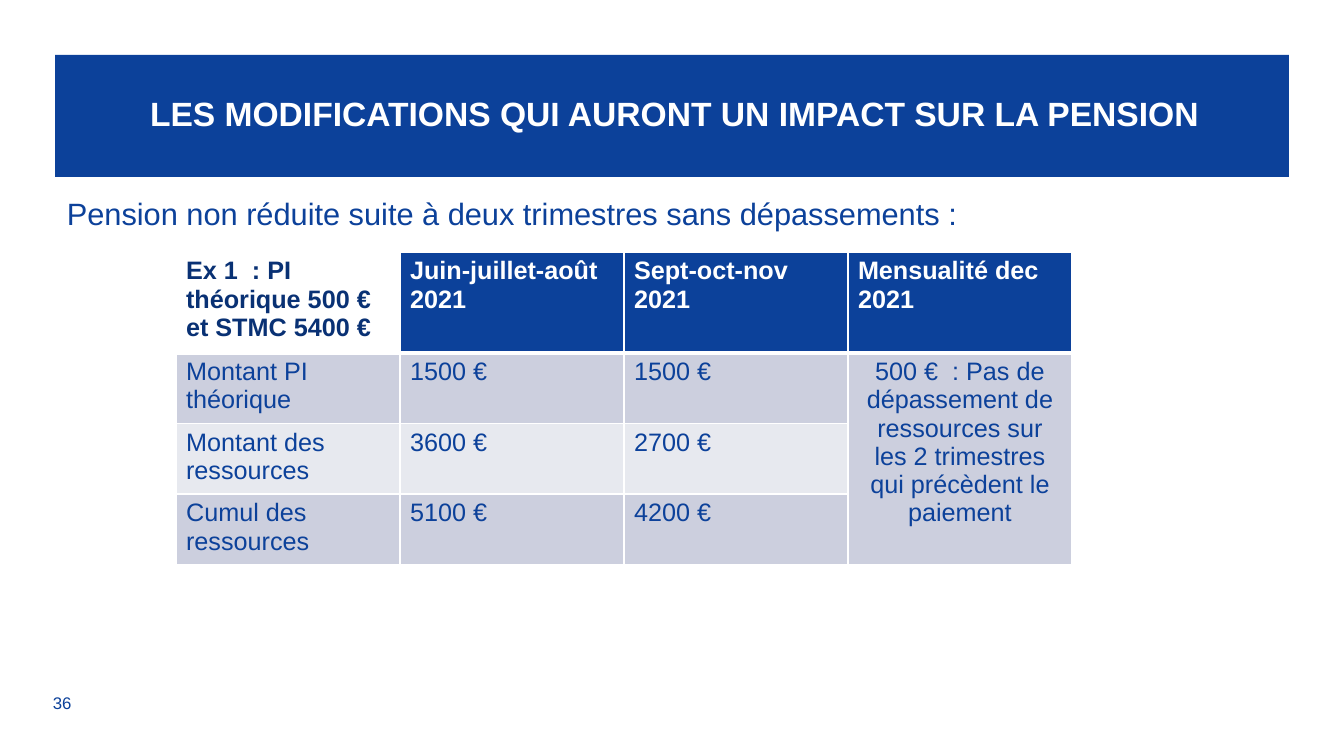
from lxml import etree
from pptx import Presentation
from pptx.dml.color import RGBColor
from pptx.enum.shapes import MSO_SHAPE
from pptx.enum.text import MSO_ANCHOR, PP_ALIGN
from pptx.oxml.ns import qn
from pptx.util import Pt

RECT = MSO_SHAPE.RECTANGLE
TOP, MIDDLE = MSO_ANCHOR.TOP, MSO_ANCHOR.MIDDLE
LEFT, CENTER = PP_ALIGN.LEFT, PP_ALIGN.CENTER

# Content
TITLE = "LES MODIFICATIONS QUI AURONT UN IMPACT SUR LA PENSION"
INTRO = "Pension non réduite suite à deux trimestres sans dépassements :"
PAGE = "36"
HEAD = ["Ex 1  : PI théorique 500 € et STMC 5400 €", "Juin-juillet-août 2021",
        "Sept-oct-nov 2021", "Mensualité dec 2021"]
ROWS = [
    ["Montant PI théorique", "1500 €", "1500 €"],
    ["Montant des ressources", "3600 €", "2700 €"],
    ["Cumul des ressources", "5100 €", "4200 €"],
]
RESULT = ("500 €  : Pas de dépassement de ressources sur les 2 trimestres "
          "qui précèdent le paiement")

# Style
FONT = "Arial"
BLUE, NAVY, WHITE = "0C419A", "093174", "FFFFFF"
BANDS = ["CCCFDE", "E7E9EF"]
COL_W, HEAD_H, ROW_H = 224, 95, 67


def px(n):
    return round(n * 914400 / 100.8)


def rgb(code):
    return RGBColor.from_string(code)


def write(frame, text, size, color=BLUE, bold=False, align=LEFT, line=None, after=None):
    par = frame.paragraphs[0]
    par.alignment = align
    if line:
        par.line_spacing = line
    if after:
        par.space_after = Pt(after)
    run = par.add_run()
    run.text = text
    font = run.font
    font.name, font.size, font.bold = FONT, Pt(size), bold
    font.color.rgb = rgb(color)


def add_box(slide, box, text, size, anchor=TOP, **style):
    frame = slide.shapes.add_textbox(*map(px, box)).text_frame
    frame.word_wrap = True
    frame.vertical_anchor = anchor
    write(frame, text, size, **style)


def edge(cell, heavy):
    """White borders, placed ahead of the cell fill."""
    props = cell._tc.get_or_add_tcPr()
    for i, side in enumerate(["lnL", "lnR", "lnT", "lnB"]):
        width = Pt(3) if side == heavy else Pt(1)
        line = etree.Element(qn("a:" + side), w=str(width))
        fill = etree.SubElement(line, qn("a:solidFill"))
        etree.SubElement(fill, qn("a:srgbClr"), val=WHITE)
        props.insert(i, line)


def paint(cell, fill, heavy=None):
    cell.fill.solid()
    cell.fill.fore_color.rgb = rgb(fill)
    edge(cell, heavy)


def add_grid(slide):
    count = len(ROWS) + 1
    last = len(HEAD) - 1
    table = slide.shapes.add_table(
        count, len(HEAD), px(176), px(252),
        px(COL_W * len(HEAD)), px(HEAD_H + ROW_H * len(ROWS))).table
    for col in table.columns:
        col.width = px(COL_W)
    for r, row in enumerate(table.rows):
        row.height = px(ROW_H if r else HEAD_H)

    # Header row
    for c, text in enumerate(HEAD):
        cell = table.cell(0, c)
        paint(cell, BLUE if c else WHITE, "lnB")
        write(cell.text_frame, text, 18, WHITE if c else NAVY, bold=True)

    # Banded rows, with the result merged down the last column
    for r, row in enumerate(ROWS, 1):
        for c in range(len(HEAD)):
            band = BANDS[0] if c == last else BANDS[(r - 1) % 2]
            paint(table.cell(r, c), band, "lnT" if r == 1 else None)
        for c, text in enumerate(row):
            write(table.cell(r, c).text_frame, text, 18)
    result = table.cell(1, last)
    result.merge(table.cell(count - 1, last))
    write(result.text_frame, RESULT, 18, align=CENTER)


def main():
    deck = Presentation()
    deck.slide_width, deck.slide_height = px(1344), px(756)
    slide = deck.slides.add_slide(deck.slide_layouts[6])

    # Title band
    band = slide.shapes.add_shape(RECT, *map(px, (55, 55, 1234, 122)))
    band.shadow.inherit = False
    band.fill.solid()
    band.fill.fore_color.rgb = rgb(BLUE)
    band.line.fill.background()
    frame = band.text_frame
    frame.word_wrap = True
    frame.vertical_anchor = MIDDLE
    frame.margin_left = px(95)
    frame.margin_right = frame.margin_top = frame.margin_bottom = px(8)
    write(frame, TITLE, 24, WHITE, bold=True, line=0.9)

    # Intro, table and page number
    add_box(slide, (57, 186, 1232, 488), INTRO, 22, line=1.1, after=17)
    add_grid(slide)
    add_box(slide, (43, 687, 80, 32), PAGE, 12, anchor=MIDDLE)

    deck.save("out.pptx")


if __name__ == "__main__":
    main()
